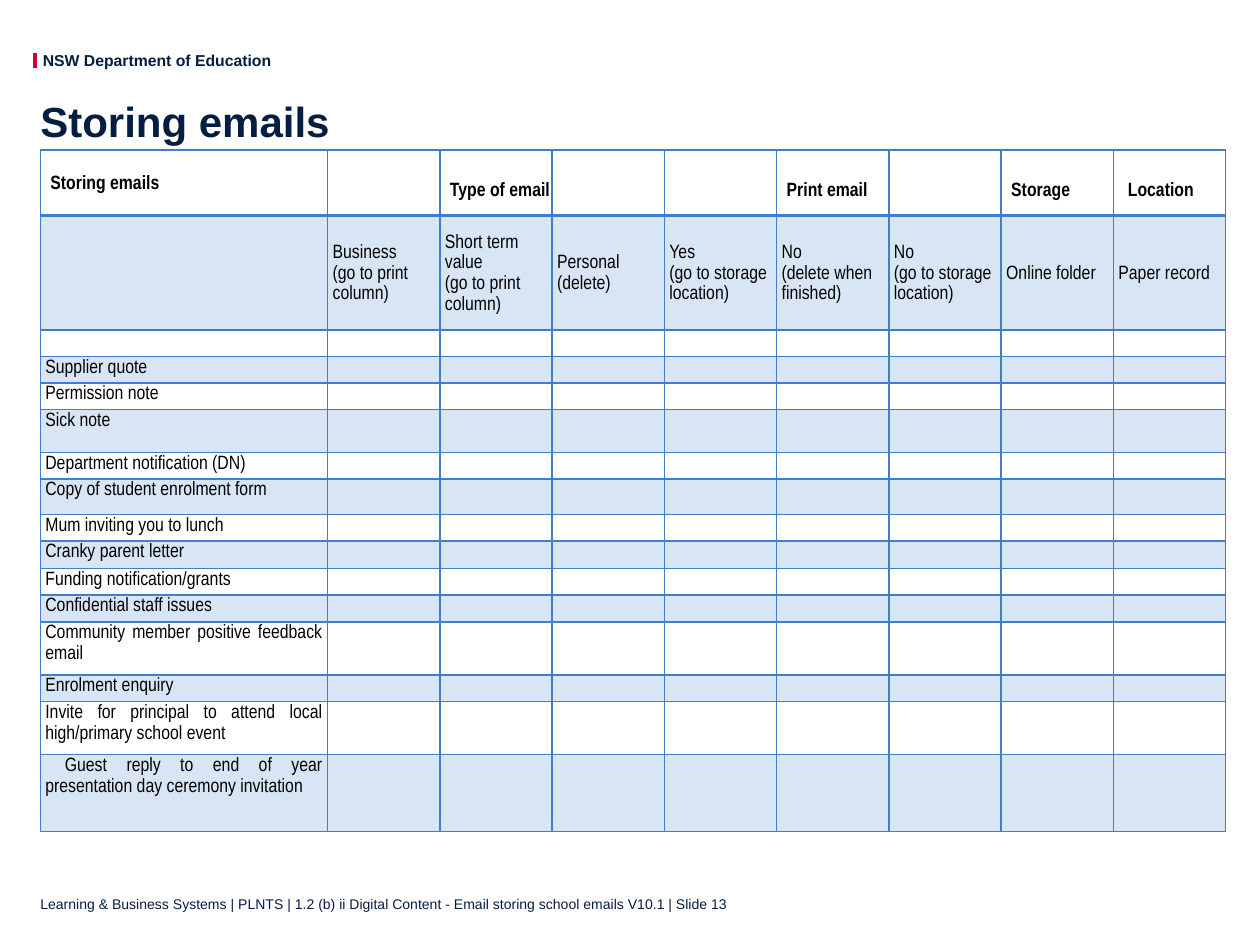
import pptx
import pptx.dml.color
import pptx.enum.shapes
import pptx.enum.text
import pptx.oxml
import pptx.oxml.ns
import pptx.util
from lxml import etree

Inches = pptx.util.Inches
Pt = pptx.util.Pt
RGBColor = pptx.dml.color.RGBColor
Anchor = pptx.enum.text.MSO_ANCHOR
Align = pptx.enum.text.PP_ALIGN
qn = pptx.oxml.ns.qn

NAVY = RGBColor(0x04, 0x1E, 0x42)
RED = RGBColor(0xCE, 0x00, 0x37)
BLUE = RGBColor(0x40, 0x7E, 0xC9)
BLACK = RGBColor(0, 0, 0)

HEADS = {0: "Storing emails", 2: "Type of email", 5: "Print email",
         7: "Storage", 8: " Location"}
CHOICES = [
    [],
    ["Business", "(go to print column)"],
    ["Short term value", "(go to print column)"],
    ["Personal", "(delete)"],
    ["Yes", "(go to storage location)"],
    ["No", "(delete when finished)"],
    ["No", "(go to storage location)"],
    ["Online folder"],
    ["Paper record"],
]
# Email label and row height; the first row is blank
EMAILS = [
    ("", 0.21),
    ("Supplier quote", 0.21),
    ("Permission note", 0.21),
    ("Sick note", 0.34),
    ("Department notification (DN)", 0.21),
    ("Copy of student enrolment form", 0.28),
    ("Mum inviting you to lunch", 0.21),
    ("Cranky parent letter", 0.22),
    ("Funding notification/grants", 0.21),
    ("Confidential staff issues", 0.21),
    ("Community member positive feedback email", 0.41),
    ("Enrolment enquiry", 0.21),
    ("Invite for principal to attend local high/primary school event", 0.41),
    (" Guest reply to end of year presentation day ceremony invitation", 0.61),
]


def add_run(para, text, size, color, bold=False, face="Arial"):
    run = para.add_run()
    run.text = text
    font = run.font
    font.name, font.size, font.bold = face, Pt(size), bold
    font.color.rgb = color


def set_frame(frame, anchor, wrap=True):
    frame.margin_left = frame.margin_right = 0
    frame.margin_top = frame.margin_bottom = 0
    frame.word_wrap = wrap
    frame.vertical_anchor = anchor


def add_header(slide, x, y, w, h):
    # Red bar
    bar = slide.shapes.add_connector(
        pptx.enum.shapes.MSO_CONNECTOR.STRAIGHT,
        Inches(x), Inches(y + 0.02), Inches(x), Inches(y + 0.14))
    bar.line.color.rgb = RED
    bar.line.width = Pt(2.5)
    etree.SubElement(bar._element.spPr, qn("a:effectLst"))
    # Department name
    box = slide.shapes.add_textbox(Inches(x + 0.06), Inches(y),
                                   Inches(w - 0.06), Inches(h))
    set_frame(box.text_frame, Anchor.TOP, wrap=False)
    box.text_frame.auto_size = pptx.enum.text.MSO_AUTO_SIZE.SHAPE_TO_FIT_TEXT
    add_run(box.text_frame.paragraphs[0], "NSW Department of Education",
            9, NAVY, bold=True)


def add_title(slide, x, y, w, h):
    title = slide.shapes.title
    title.left, title.top = Inches(x), Inches(y)
    title.width, title.height = Inches(w), Inches(h)
    set_frame(title.text_frame, Anchor.MIDDLE)
    para = title.text_frame.paragraphs[0]
    para.alignment = Align.LEFT
    para.line_spacing = 0.9
    add_run(para, "Storing emails", 24, NAVY, bold=True)


def set_edges(cell, top, base):
    props = cell._tc.get_or_add_tcPr()
    for side, width in (("L", 1), ("R", 1), ("T", top), ("B", base)):
        line = etree.SubElement(props, qn(f"a:ln{side}"), w=str(Pt(width)))
        fill = etree.SubElement(line, qn("a:solidFill"))
        etree.SubElement(fill, qn("a:srgbClr"), val=str(BLUE))


def set_fill(cell, tint):
    if not tint:
        cell.fill.background()
        return
    cell.fill.solid()
    cell.fill.fore_color.rgb = BLUE
    color = cell._tc.tcPr.find(qn("a:solidFill")).find(qn("a:srgbClr"))
    etree.SubElement(color, qn("a:alpha"), val="20000")


def fill_cell(cell, lines, margins, anchor, align, bold):
    (cell.margin_left, cell.margin_top,
     cell.margin_right, cell.margin_bottom) = map(Inches, margins)
    cell.vertical_anchor = anchor
    frame = cell.text_frame
    for i, text in enumerate(lines):
        para = frame.add_paragraph() if i else frame.paragraphs[0]
        para.alignment = align
        para.line_spacing = 1.15
        add_run(para, text, 11, BLACK, bold, "Arial Narrow")
    if not lines:
        # Small type keeps blank rows low
        etree.SubElement(frame.paragraphs[0]._p, qn("a:endParaRPr"), sz="1100")


def add_grid(slide, x, y, w, h):
    rows = [0.52, 0.91] + [tall for _, tall in EMAILS]
    first, count = 2.28, len(CHOICES)
    grid = slide.shapes.add_table(len(rows), count, Inches(x), Inches(y),
                                  Inches(w), Inches(h)).table
    grid.first_row = grid.horz_banding = False
    for col in range(count):
        wide = first if col == 0 else (w - first) / (count - 1)
        grid.columns[col].width = Inches(wide)
    for row, tall in enumerate(rows):
        grid.rows[row].height = Inches(tall)
        for col in range(count):
            cell = grid.cell(row, col)
            margins, anchor, align = (0.04, 0, 0.04, 0), Anchor.MIDDLE, Align.LEFT
            if row == 0:
                lines = [HEADS[col]] if col in HEADS else []
                margins = (0.08, 0.12 if col else 0, 0, 0)
            elif row == 1:
                lines = CHOICES[col]
            else:
                label = EMAILS[row - 2][0]
                lines = [label] if label and col == 0 else []
                anchor, align = Anchor.TOP, Align.JUSTIFY
            fill_cell(cell, lines, margins, anchor, align, bold=row == 0)
            set_edges(cell, 2 if row == 1 else 1, 2 if row == 0 else 1)
            set_fill(cell, tint=row % 2 == 1)


def add_footer(slide, x, y, w, h):
    box = slide.shapes.add_textbox(Inches(x), Inches(y), Inches(w), Inches(h))
    set_frame(box.text_frame, Anchor.BOTTOM)
    add_run(box.text_frame.paragraphs[0],
            "Learning & Business Systems | PLNTS | 1.2 (b) ii Digital Content"
            " - Email storing school emails V10.1 | Slide 13", 8, NAVY)


def main():
    deck = pptx.Presentation()
    deck.slide_width, deck.slide_height = Inches(10), Inches(7.5)
    slide = deck.slides.add_slide(deck.slide_layouts.get_by_name("Title Only"))
    add_header(slide, 0.28, 0.4, 1.89, 0.15)
    add_title(slide, 0.32, 0.71, 9.43, 0.55)
    add_grid(slide, 0.32, 1.19, 9.41, 5.38)
    add_footer(slide, 0.32, 6.84, 9.43, 0.4)
    deck.save("out.pptx")


if __name__ == "__main__":
    main()
